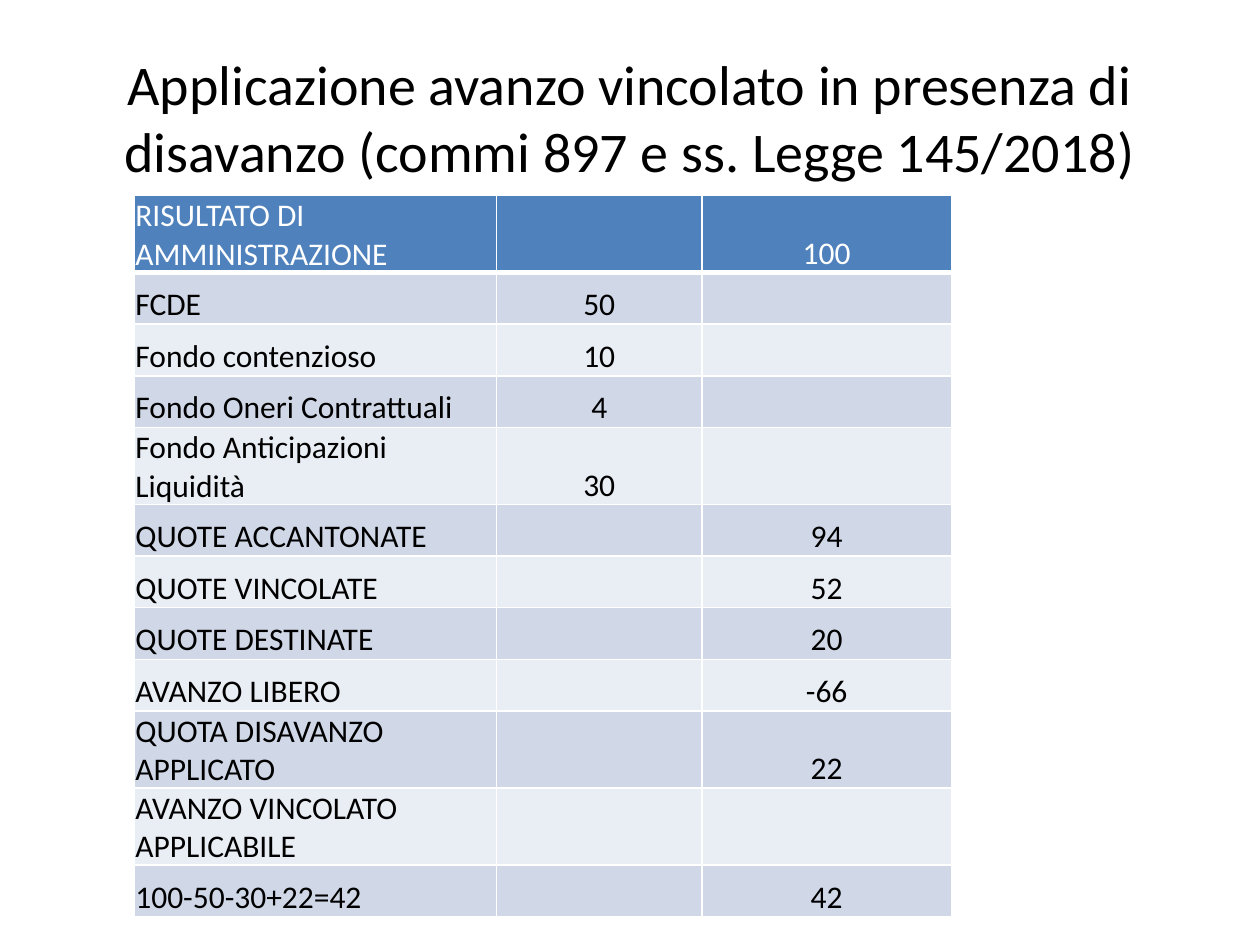
"""Build the slide on applying restricted surplus when there is a deficit."""
import lxml.etree
import pptx
import pptx.dml.color
import pptx.enum.text
import pptx.oxml.ns
import pptx.util

Cm, Pt = pptx.util.Cm, pptx.util.Pt
RGBColor = pptx.dml.color.RGBColor
ALIGN = pptx.enum.text.PP_ALIGN
ANCHOR = pptx.enum.text.MSO_ANCHOR

BLACK = RGBColor(0x00, 0x00, 0x00)
WHITE = RGBColor(0xFF, 0xFF, 0xFF)
HEADER_BLUE = RGBColor(0x4F, 0x81, 0xBD)
BANDS = (RGBColor(0xE9, 0xED, 0xF4), RGBColor(0xD0, 0xD8, 0xE8))

TITLE = "Applicazione avanzo vincolato in presenza di disavanzo (commi 897 e ss. Legge 145/2018)"
COLUMN_WIDTHS = (7.31, 4.14, 5.03)
ROW_HEIGHT = 1.04
BUDGET_ROWS = (
    ("RISULTATO DI AMMINISTRAZIONE", "", "100"),
    ("FCDE", "50", ""),
    ("Fondo contenzioso", "10", ""),
    ("Fondo Oneri Contrattuali", "4", ""),
    ("Fondo Anticipazioni Liquidità", "30", ""),
    ("QUOTE ACCANTONATE", "", "94"),
    ("QUOTE VINCOLATE", "", "52"),
    ("QUOTE DESTINATE", "", "20"),
    ("AVANZO LIBERO", "", "-66"),
    ("QUOTA DISAVANZO APPLICATO", "", "22"),
    ("AVANZO VINCOLATO APPLICABILE", "", ""),
    ("100-50-30+22=42", "", "42"),
)


def write_text(frame, text, size=18, color=BLACK, align=ALIGN.LEFT):
    paragraph = frame.paragraphs[0]
    paragraph.alignment = align
    paragraph.font.size = Pt(size)
    if text:
        run = paragraph.add_run()
        run.text = text
        run.font.name = "Calibri"
        run.font.size = Pt(size)
        run.font.color.rgb = color


def set_borders(cell, **widths):
    properties = cell._tc.get_or_add_tcPr()
    qn = pptx.oxml.ns.qn
    for side in "LRTB":
        border = lxml.etree.SubElement(
            properties, qn(f"a:ln{side}"), w=str(Pt(widths.get(side, 1)))
        )
        fill = lxml.etree.SubElement(border, qn("a:solidFill"))
        lxml.etree.SubElement(fill, qn("a:srgbClr"), val=str(WHITE))


def add_title(slide):
    title = slide.shapes.add_textbox(Cm(1.27), Cm(0.76), Cm(22.86), Cm(3.18))
    title.text_frame.word_wrap = True
    title.text_frame.vertical_anchor = ANCHOR.MIDDLE
    write_text(title.text_frame, TITLE, size=32, align=ALIGN.CENTER)


def fill_cell(cell, text, row, column):
    is_header = row == 0
    set_borders(cell, T=3 if row == 1 else 1, B=3 if is_header else 1)
    cell.fill.solid()
    cell.fill.fore_color.rgb = HEADER_BLUE if is_header else BANDS[row % 2]
    cell.vertical_anchor = ANCHOR.BOTTOM
    cell.margin_left = cell.margin_right = cell.margin_top = Cm(0.03)
    cell.margin_bottom = Cm(0)
    write_text(
        cell.text_frame,
        text,
        color=WHITE if is_header else BLACK,
        align=ALIGN.CENTER if column else ALIGN.LEFT,
    )


def add_budget_table(slide):
    budget = slide.shapes.add_table(
        len(BUDGET_ROWS), len(COLUMN_WIDTHS), Cm(2.7), Cm(3.94),
        Cm(sum(COLUMN_WIDTHS)), Cm(ROW_HEIGHT * len(BUDGET_ROWS)),
    ).table
    budget.first_row = budget.horz_banding = False
    for column, width in zip(budget.columns, COLUMN_WIDTHS):
        column.width = Cm(width)
    for row, entries in enumerate(BUDGET_ROWS):
        budget.rows[row].height = Cm(ROW_HEIGHT)
        for column, text in enumerate(entries):
            fill_cell(budget.cell(row, column), text, row, column)


def main():
    deck = pptx.Presentation()
    deck.slide_width, deck.slide_height = Cm(25.4), Cm(19.05)
    slide = deck.slides.add_slide(deck.slide_layouts[6])
    add_title(slide)
    add_budget_table(slide)
    deck.save("out.pptx")


if __name__ == "__main__":
    main()
